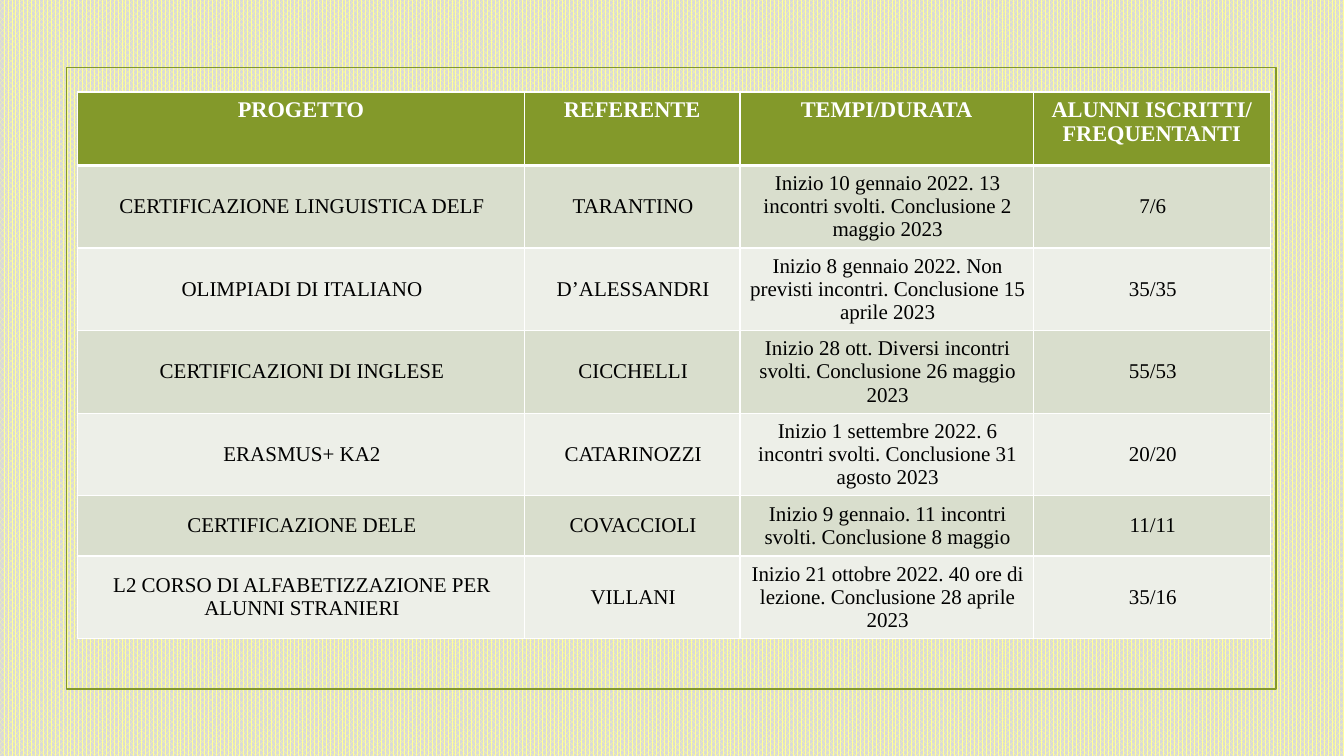
from lxml.etree import SubElement
from pptx import Presentation
from pptx.dml.color import RGBColor
from pptx.enum.dml import MSO_PATTERN
from pptx.enum.shapes import MSO_SHAPE
from pptx.enum.text import MSO_ANCHOR, PP_ALIGN
from pptx.oxml.ns import qn
from pptx.util import Cm, Pt

COLOURS = {
    "olive": "83992A",
    "yellow": "FFFF99",
    "grey": "D9D9D9",
    "white": "FFFFFF",
    "black": "000000",
    "dark band": "D9DECD",
    "light band": "EDEFE8",
}
FONT = "Times New Roman"
COLUMN_WIDTHS = [11.25, 5.44, 7.39, 5.97]
ROW_HEIGHTS = [1.85, 2.08, 2.08, 2.08, 2.08, 1.52, 2.08]
HEADINGS = ["PROGETTO", "REFERENTE", "TEMPI/DURATA", "ALUNNI ISCRITTI/\nFREQUENTANTI"]
PROJECTS = [
    ["CERTIFICAZIONE LINGUISTICA DELF", "TARANTINO",
     "Inizio 10 gennaio 2022. 13 incontri svolti. Conclusione 2 maggio 2023", "7/6"],
    ["OLIMPIADI DI ITALIANO", "D’ALESSANDRI",
     "Inizio 8 gennaio 2022. Non previsti incontri. Conclusione 15 aprile 2023", "35/35"],
    ["CERTIFICAZIONI DI INGLESE", "CICCHELLI",
     "Inizio 28 ott. Diversi incontri svolti. Conclusione 26 maggio 2023", "55/53"],
    ["ERASMUS+ KA2", "CATARINOZZI",
     "Inizio 1 settembre 2022. 6 incontri svolti. Conclusione 31 agosto 2023", "20/20"],
    ["CERTIFICAZIONE DELE", "COVACCIOLI",
     "Inizio 9 gennaio. 11 incontri svolti. Conclusione 8 maggio", "11/11"],
    ["L2 CORSO DI ALFABETIZZAZIONE PER ALUNNI STRANIERI", "VILLANI",
     "Inizio 21 ottobre 2022. 40 ore di lezione. Conclusione 28 aprile 2023", "35/16"],
]


class SlideBuilder:
    """Holds the style and the current slide."""

    def __init__(self, page, font, colours):
        self.page = page
        self.font = font
        self.colours = colours

    def colour(self, name):
        """Return the named colour."""
        return RGBColor.from_string(self.colours[name])

    def background(self, pattern, front, back):
        """Fill the page with a two-colour pattern."""
        fill = self.page.background.fill
        fill.patterned()
        fill.pattern = pattern
        fill.fore_color.rgb = self.colour(front)
        fill.back_color.rgb = self.colour(back)

    def frame(self, left, top, width, height, colour, weight):
        """Draw an outlined rectangle without a fill."""
        box = self.page.shapes.add_shape(
            MSO_SHAPE.RECTANGLE, Cm(left), Cm(top), Cm(width), Cm(height))
        box.shadow.inherit = False
        box.fill.background()
        box.line.color.rgb = self.colour(colour)
        box.line.width = Pt(weight)

    def borders(self, cell, colour, weights):
        """Set the left, right, top and bottom borders of a cell."""
        properties = cell._tc.get_or_add_tcPr()
        for side, weight in zip("LRTB", weights):
            line = SubElement(properties, qn(f"a:ln{side}"), w=str(Pt(weight)))
            fill = SubElement(line, qn("a:solidFill"))
            SubElement(fill, qn("a:srgbClr"), val=self.colours[colour])

    def text(self, cell, words, size, colour, bold):
        """Write centred paragraphs, one for each line of words."""
        for index, line in enumerate(words.split("\n")):
            frame = cell.text_frame
            para = frame.add_paragraph() if index else frame.paragraphs[0]
            para.alignment = PP_ALIGN.CENTER
            span = para.add_run()
            span.text = line
            span.font.name = self.font
            span.font.size = Pt(size)
            span.font.bold = bold
            span.font.color.rgb = self.colour(colour)

    def cell(self, cell, words, row):
        """Format one cell as heading or as part of a banded row."""
        self.borders(cell, "white", (1, 1, 3 if row == 1 else 1, 1 if row else 3))
        cell.fill.solid()
        if row == 0:
            cell.fill.fore_color.rgb = self.colour("olive")
            self.text(cell, words, 16, "white", True)
            return
        cell.fill.fore_color.rgb = self.colour("dark band" if row % 2 else "light band")
        cell.vertical_anchor = MSO_ANCHOR.MIDDLE
        cell.margin_left, cell.margin_right = Cm(0.1), Cm(0.05)
        cell.margin_top = cell.margin_bottom = Cm(0.03)
        self.text(cell, words, 15, "black", False)

    def table(self, left, top, widths, heights, rows):
        """Add a table with a heading row and banded rows."""
        table = self.page.shapes.add_table(
            len(rows), len(widths), Cm(left), Cm(top),
            Cm(sum(widths)), Cm(sum(heights))).table
        for column, width in zip(table.columns, widths):
            column.width = Cm(width)
        for index, (height, row) in enumerate(zip(heights, rows)):
            table.rows[index].height = Cm(height)
            for position, words in enumerate(row):
                self.cell(table.cell(index, position), words, index)


def main():
    """Build the project table slide."""
    deck = Presentation()
    deck.slide_width, deck.slide_height = Cm(33.87), Cm(19.05)
    page = deck.slides.add_slide(deck.slide_layouts[6])
    builder = SlideBuilder(page, FONT, COLOURS)
    builder.background(MSO_PATTERN.PERCENT_75, "yellow", "grey")
    builder.frame(1.68, 1.7, 30.48, 15.67, "olive", 1.25)
    builder.table(1.96, 2.32, COLUMN_WIDTHS, ROW_HEIGHTS, [HEADINGS] + PROJECTS)
    deck.save("out.pptx")


if __name__ == "__main__":
    main()
